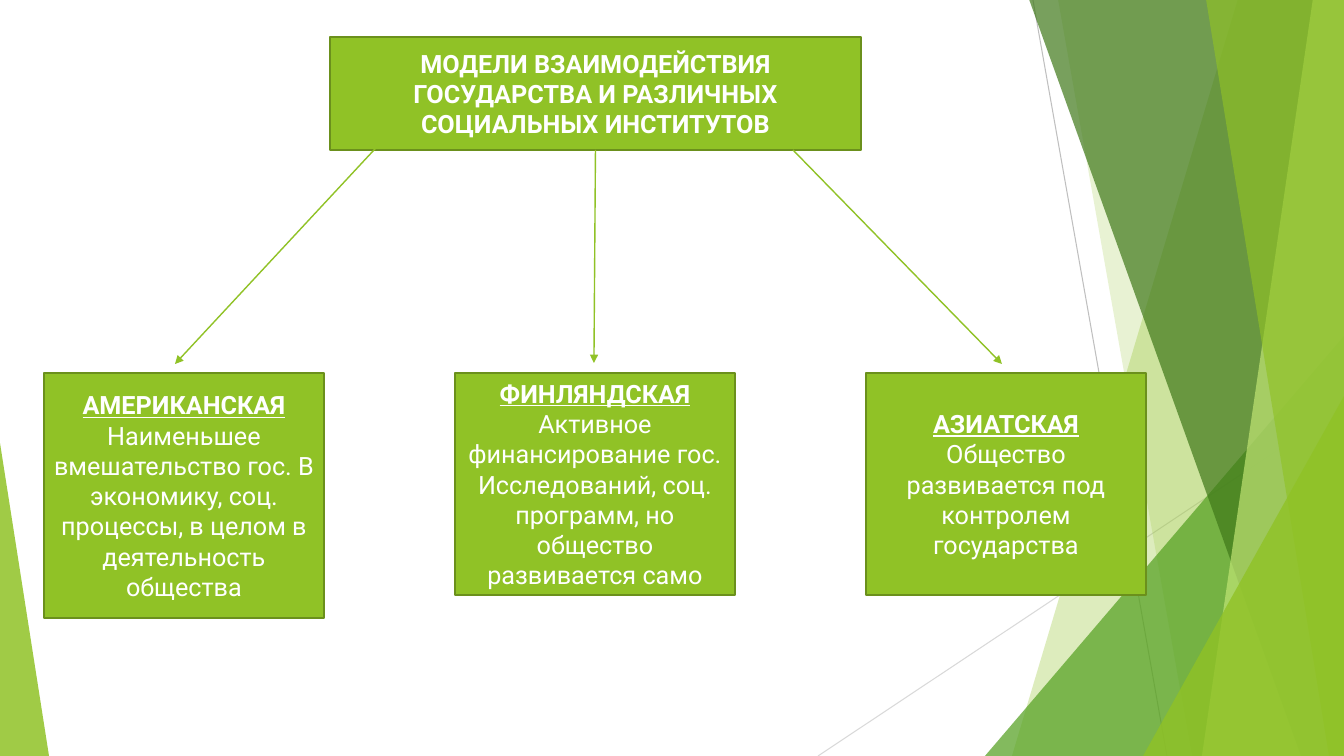
from dataclasses import dataclass
from lxml.etree import SubElement
from pptx import Presentation
from pptx.dml.color import RGBColor as RGB
from pptx.enum.shapes import MSO_CONNECTOR as CONN, MSO_SHAPE as SHAPE
from pptx.enum.text import MSO_ANCHOR as ANCHOR, PP_ALIGN as ALIGN
from pptx.oxml.ns import qn
from pptx.util import Pt

PX = 914400 / 100.8
W, H = 1344, 756


@dataclass(frozen=True)
class Theme:
    """Colours and type sizes of the slide."""
    lime: str = "90C226"
    green: str = "54A021"
    forest: str = "3F7819"
    pale: str = "C0E474"
    border: str = "6B901C"
    grey: str = "BFBFBF"
    light_grey: str = "D9D9D9"
    white: str = "FFFFFF"
    font: str = "Roboto"
    size: int = 18


T = Theme()

BANDS = [
    ([(1238, -1), (W, -1), (W, H), (1012, H)], T.lime, 30),
    ([(1058, -1), (W, -1), (W, H), (1192, H)], T.lime, 20),
    ((985, 336, 359, 420), 1, T.green, 72),
    ([(1029, -1), (W, -1), (W, H), (1301, H)], T.forest, 70),
    ([(1313, -1), (W, -1), (W, H), (1202, H)], T.pale, 70),
    ([(1206, -1), (W, -1), (W, H), (1329, H)], T.lime, 65),
    ((1143, 396, 201, 360), 1, T.lime, 80),
    ((0, 443, 49, 313), 0, T.lime, 85),
]

MODELS = [
    ("АМЕРИКАНСКАЯ", "Наименьшее вмешательство гос. В экономику, соц. процессы, "
     "в целом в деятельность общества", 245),
    ("ФИНЛЯНДСКАЯ", "Активное финансирование гос. Исследований, соц. программ, "
     "но общество развивается само", 222),
    ("АЗИАТСКАЯ", "Общество развивается под контролем государства", 222),
]


def px(*values):
    """Turn pixel lengths into EMU."""
    return [round(v * PX) for v in values]


def paint(sp, color, alpha=100):
    """Fill a shape without outline or shadow, at an opacity in percent."""
    sp.shadow.inherit = False
    sp.fill.solid()
    sp.fill.fore_color.rgb = RGB.from_string(color)
    sp.line.fill.background()
    if alpha < 100:
        clr = sp._element.spPr.find(qn("a:solidFill"))[0]
        SubElement(clr, qn("a:alpha"), val=str(alpha * 1000))


def add_band(s, points, color, alpha):
    """Draw a translucent polygon."""
    fb = s.shapes.build_freeform(*points[0], scale=PX)
    fb.add_line_segments(points[1:], close=True)
    paint(fb.convert_to_shape(), color, alpha)


def add_triangle(s, box, apex, color, alpha):
    """Draw a translucent right triangle with its apex at one end."""
    sp = s.shapes.add_shape(SHAPE.ISOSCELES_TRIANGLE, *px(*box))
    sp.adjustments[0] = apex
    paint(sp, color, alpha)


def add_line(s, start, end, color, width, arrow=False):
    """Draw a straight line, with an arrowhead at its end if asked."""
    cn = s.shapes.add_connector(CONN.STRAIGHT, *px(*start, *end))
    cn.line.color.rgb = RGB.from_string(color)
    cn.line.width = Pt(width)
    if arrow:
        SubElement(cn.line._get_or_add_ln(), qn("a:tailEnd"), type="triangle")
    SubElement(cn._element.spPr, qn("a:effectLst"))
    return cn


def add_text(p, text, bold=False, underline=False, size=T.size, color=T.white):
    """Write one centred paragraph."""
    p.alignment = ALIGN.CENTER
    r = p.add_run()
    r.text = text
    f = r.font
    f.name, f.size, f.bold, f.underline = T.font, Pt(size), bold, underline
    f.color.rgb = RGB.from_string(color)


def add_box(s, box):
    """Draw an outlined rectangle ready for text."""
    sp = s.shapes.add_shape(SHAPE.RECTANGLE, *px(*box))
    paint(sp, T.lime)
    sp.line.color.rgb = RGB.from_string(T.border)
    sp.line.width = Pt(1.5)
    sp.text_frame.word_wrap = True
    sp.text_frame.vertical_anchor = ANCHOR.MIDDLE
    return sp


def add_backdrop(s):
    """Draw the thin lines and green bands at the slide's edges."""
    add_line(s, (1033, 0), (1167, H), T.grey, 0.75)
    add_line(s, (W, 406), (818, H), T.light_grey, 0.75)
    for band in BANDS:
        draw = add_band if len(band) == 3 else add_triangle
        draw(s, *band)


def main():
    """Build and save the slide."""
    prs = Presentation()
    prs.slide_width, prs.slide_height = px(W, H)
    s = prs.slides.add_slide(prs.slide_layouts[6])
    add_backdrop(s)

    title = add_box(s, (330, 37, 531, 113))
    add_text(title.text_frame.paragraphs[0], "МОДЕЛИ ВЗАИМОДЕЙСТВИЯ ГОСУДАРСТВА "
             "И РАЗЛИЧНЫХ СОЦИАЛЬНЫХ ИНСТИТУТОВ", bold=True)

    for i, (name, about, height) in enumerate(MODELS):
        tf = add_box(s, (44 + 411 * i, 373, 280, height)).text_frame
        add_text(tf.paragraphs[0], name, bold=True, underline=True)
        add_text(tf.add_paragraph(), about)

    add_line(s, (388, 135), (175, 364), T.lime, 1, arrow=True)
    middle = add_line(s, (595, 150), (594, 363), T.lime, 1, arrow=True)
    middle.begin_connect(title, 2)
    add_line(s, (793, 150), (1002, 364), T.lime, 1, arrow=True)
    prs.save("out.pptx")


if __name__ == "__main__":
    main()
